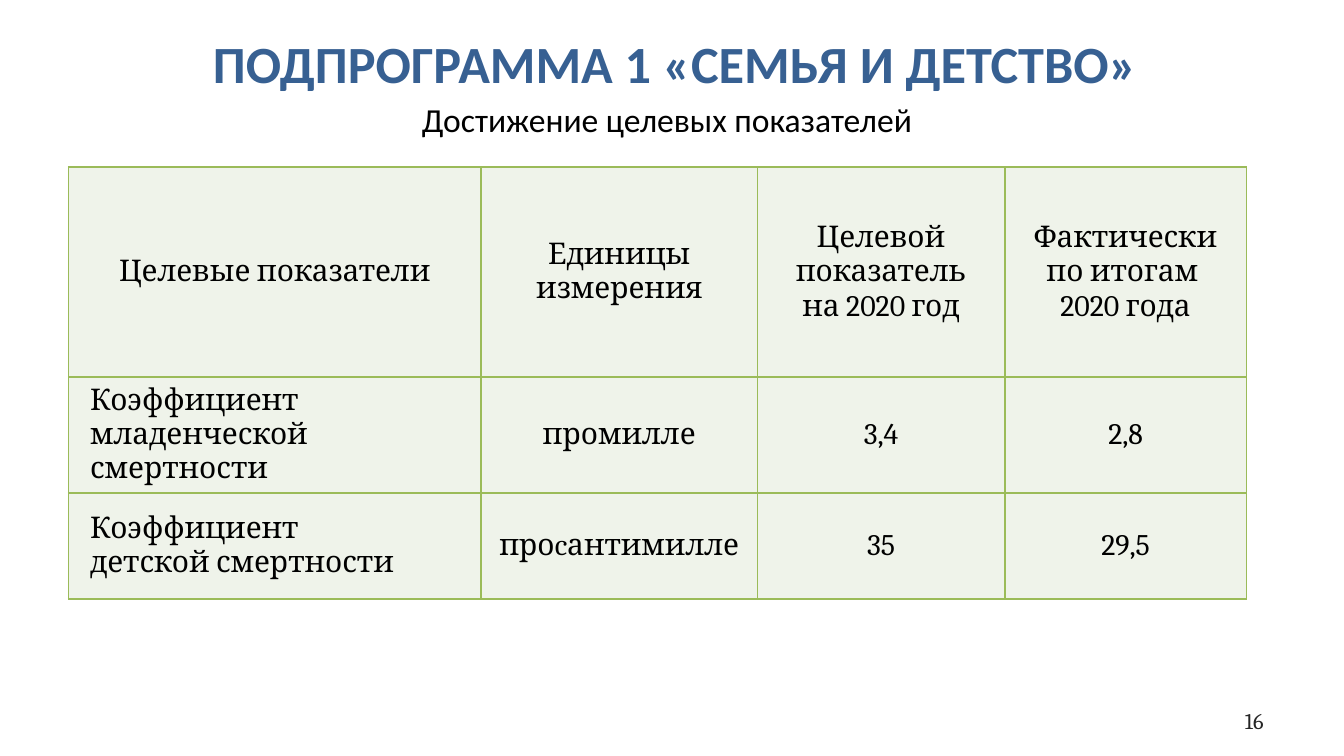
import pptx
import pptx.util
import pptx.dml.color
import pptx.enum.text
import lxml.etree

Pt = pptx.util.Pt
RGB = pptx.dml.color.RGBColor
Align = pptx.enum.text.PP_ALIGN
Anchor = pptx.enum.text.MSO_ANCHOR
hues = {"title": "376092", "text": "000000", "page": "262626",
        "cell": "EFF3EA", "line": "9BBB59"}

deck = pptx.Presentation()
deck.slide_width, deck.slide_height = Pt(720), Pt(405)
slide = deck.slides.add_slide(deck.slide_layouts[6])


def write(frame, lines, align, hue, form):
    for i, line in enumerate(lines):
        para = frame.paragraphs[0] if i == 0 else frame.add_paragraph()
        para.alignment = align
        run = para.add_run()
        run.text = line
        for key, value in form.items():
            setattr(run.font, key, value)
        run.font.color.rgb = RGB.from_string(hues[hue])


def border(cell):
    props = cell._tc.get_or_add_tcPr()
    for i, side in enumerate(("lnL", "lnR", "lnT", "lnB")):
        line = lxml.etree.Element(pptx.oxml.ns.qn("a:" + side), w=str(Pt(1)))
        fill = lxml.etree.SubElement(line, pptx.oxml.ns.qn("a:solidFill"))
        lxml.etree.SubElement(fill, pptx.oxml.ns.qn("a:srgbClr"), val=hues["line"])
        props.insert(i, line)


# Title, subtitle and page number
labels = [
    ((15.8, 13, 697.7, 41), "ПОДПРОГРАММА 1 «СЕМЬЯ И ДЕТСТВО» ", Align.CENTER, "title",
     {"name": "Calibri", "size": Pt(28), "bold": True},
     {"word_wrap": True}),
    ((218.9, 49.7, 290.9, 28.8), "Достижение целевых показателей", Align.LEFT, "text",
     {"name": "Calibri", "size": Pt(18)},
     {"word_wrap": False}),
    ((516.2, 375.1, 167.8, 21.6), "16", Align.RIGHT, "page",
     {"name": "Cambria", "size": Pt(12)},
     {"word_wrap": True, "vertical_anchor": Anchor.MIDDLE}),
]
for place, text, align, hue, form, setup in labels:
    frame = slide.shapes.add_textbox(*map(Pt, place)).text_frame
    for key, value in setup.items():
        setattr(frame, key, value)
    write(frame, [text], align, hue, form)

# Table of target indicators
rows = [
    [["Целевые показатели"], ["Единицы измерения"],
     ["Целевой показатель", "на 2020 год"],
     ["Фактически", "по итогам ", "2020 года"]],
    [["Коэффициент", "младенческой смертности"], ["промилле"], ["3,4"], ["2,8"]],
    [["Коэффициент", "детской смертности"], ["проcантимилле"], ["35"], ["29,5"]],
]
widths = [221, 148, 132.5, 129.5]
heights = [112.5, 62, 57]
table = slide.shapes.add_table(len(rows), len(widths), Pt(36.8), Pt(89.5),
                               Pt(sum(widths)), Pt(sum(heights))).table
for column, width in zip(table.columns, widths):
    column.width = Pt(width)
for row, height in zip(table.rows, heights):
    row.height = Pt(height)

for r, row in enumerate(rows):
    for c, lines in enumerate(row):
        cell = table.cell(r, c)
        name = r > 0 and c == 0
        form = {"vertical_anchor": Anchor.MIDDLE,
                "margin_left": Pt(11.5 if name else 0.7), "margin_right": Pt(0.7),
                "margin_top": Pt(0.7), "margin_bottom": Pt(0.7)}
        for key, value in form.items():
            setattr(cell, key, value)
        cell.fill.solid()
        cell.fill.fore_color.rgb = RGB.from_string(hues["cell"])
        border(cell)
        write(cell.text_frame, lines, Align.LEFT if name else Align.CENTER, "text",
              {"name": "Cambria", "size": Pt(16), "bold": False})

deck.save("out.pptx")
